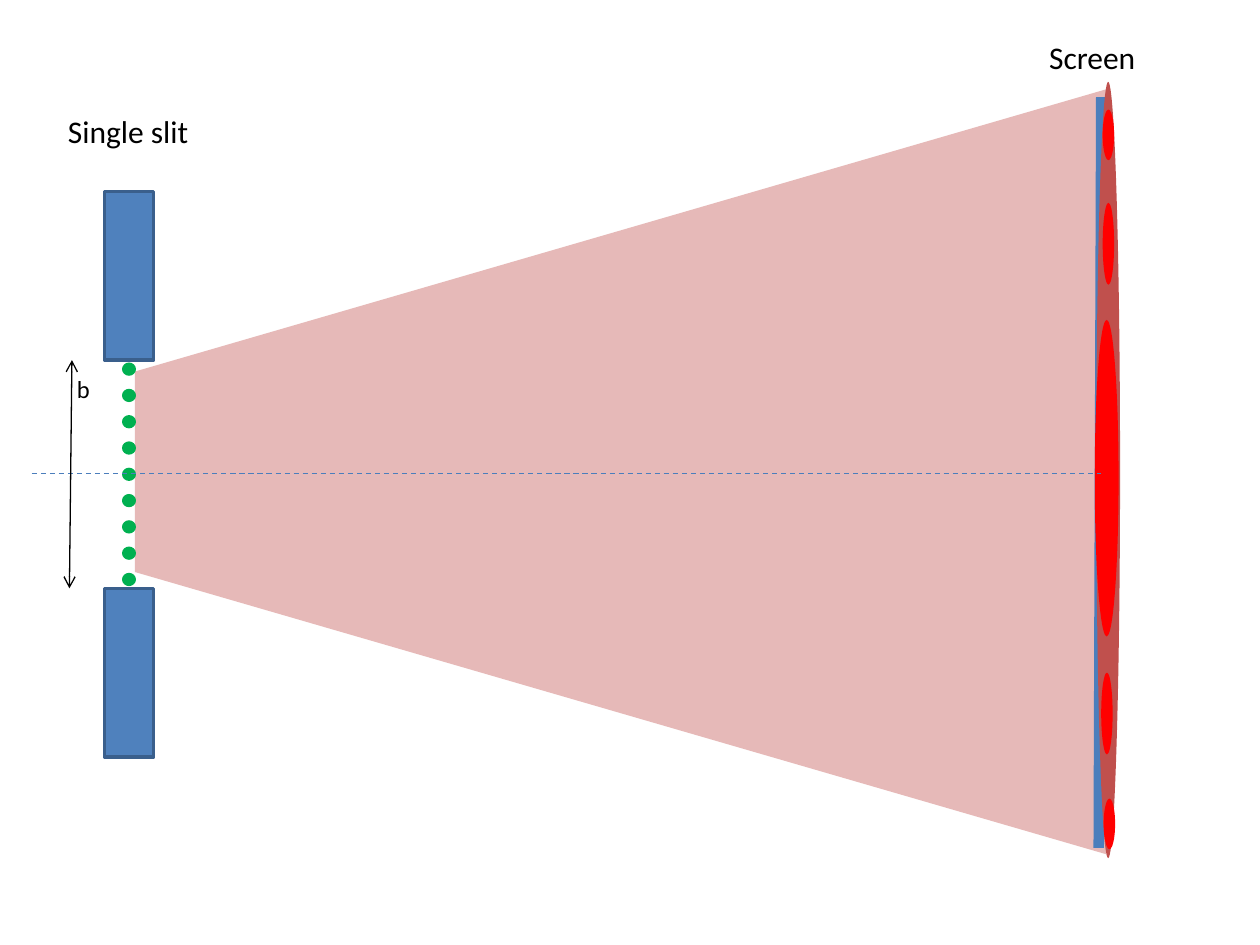
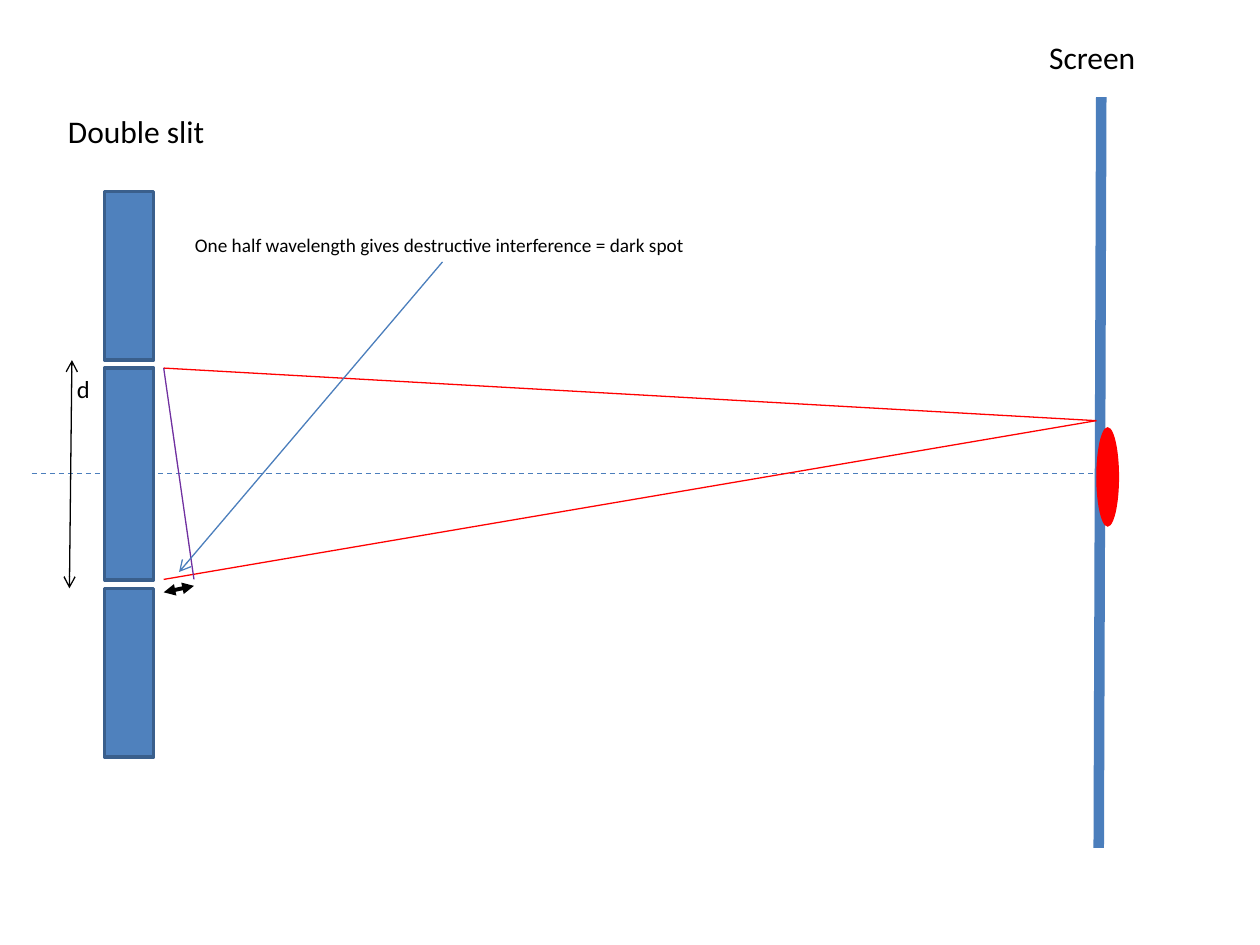
import pptx
import pptx.dml.color
import pptx.enum.dml
import pptx.enum.shapes
import pptx.enum.text
import pptx.oxml.xmlchemy
import pptx.util

Cm = pptx.util.Cm
Pt = pptx.util.Pt
SHAPE = pptx.enum.shapes.MSO_SHAPE
DASH = pptx.enum.dml.MSO_LINE
new_element = pptx.oxml.xmlchemy.OxmlElement

FONT = "Calibri"
BLACK, RED, GREEN, PURPLE = "000000", "FF0000", "00B050", "7030A0"
BLUE, BLUE_EDGE, BLUE_LINE = "4F81BD", "3A5F8C", "4B7EBC"
BEAM, GLOW = "E6B9B8", "C0504D"

# Shared geometry, in centimetres
JAW_LEFT, JAW_WIDTH, JAW_HEIGHT = 2.11, 0.99, 3.4
UPPER_JAW, LOWER_JAW = 3.86, 11.86
AXIS_Y = 9.55


def color(hex_string):
    return pptx.dml.color.RGBColor.from_string(hex_string)


class Diagram:
    """Holds the deck, the current page and the drawing style."""

    def __init__(self):
        self.deck = pptx.Presentation()
        self.deck.slide_width = Cm(25.4)
        self.deck.slide_height = Cm(19.05)
        self.page = None

    def new_page(self):
        self.page = self.deck.slides.add_slide(self.deck.slide_layouts[6])

    def shape(self, kind, left, top, width, height, fill, edge=None, parent=None):
        shapes = (parent or self.page).shapes
        item = shapes.add_shape(kind, Cm(left), Cm(top), Cm(width), Cm(height))
        item.shadow.inherit = False
        item.fill.solid()
        item.fill.fore_color.rgb = color(fill)
        if edge:
            item.line.color.rgb = color(edge)
            item.line.width = Pt(2)
        else:
            item.line.fill.background()
        return item

    def line(self, start, end, stroke, width=0.75, dash=None, head=None, tail=None):
        item = self.page.shapes.add_connector(
            pptx.enum.shapes.MSO_CONNECTOR.STRAIGHT, *map(Cm, start + end))
        item.line.color.rgb = color(stroke)
        item.line.width = Pt(width)
        if dash:
            item.line.dash_style = dash
        properties = item.line._get_or_add_ln()
        if dash == DASH.ROUND_DOT:
            properties.set("cap", "rnd")
        for tag, arrow in (("a:headEnd", head), ("a:tailEnd", tail)):
            if arrow:
                end_mark = new_element(tag)
                end_mark.set("type", arrow)
                properties.append(end_mark)
        item._element.spPr.append(new_element("a:effectLst"))

    def text(self, words, left, top, width, height, size=18):
        box = self.page.shapes.add_textbox(Cm(left), Cm(top), Cm(width), Cm(height))
        box.text_frame.word_wrap = False
        box.text_frame.auto_size = pptx.enum.text.MSO_AUTO_SIZE.SHAPE_TO_FIT_TEXT
        para = box.text_frame.paragraphs[0]
        span = para.add_run()
        span.text = words
        span.font.name = FONT
        span.font.size = Pt(size)
        span.font.color.rgb = color(BLACK)

    def jaw(self, top, height=JAW_HEIGHT):
        self.shape(SHAPE.RECTANGLE, JAW_LEFT, top, JAW_WIDTH, height, BLUE, BLUE_EDGE)

    def apparatus(self, title, title_width):
        """Screen, outer jaws and their labels."""
        self.line((22.2, 1.96), (22.15, 17.09), BLUE_LINE, 6)
        for top in (UPPER_JAW, LOWER_JAW):
            self.jaw(top)
        self.text(title, 1.12, 2.13, title_width, 1.02)
        self.text("Screen", 20.9, 0.64, 2.26, 1.02)

    def axis_and_gap(self, letter):
        """Optical axis and the marked slit distance."""
        self.line((0.64, AXIS_Y), (22.2, AXIS_Y), BLUE_LINE, dash=DASH.DASH)
        self.line((1.45, UPPER_JAW + JAW_HEIGHT), (1.4, LOWER_JAW), BLACK,
                  head="arrow", tail="arrow")
        self.text(letter, 1.3, 7.42, 0.79, 0.86, 14)


def single_slit(diagram):
    diagram.new_page()
    # Spreading beam
    beam = diagram.shape(SHAPE.TRAPEZOID, 4.8, -0.28, 15.42, 19.58, BEAM)
    beam.adjustments[0] = 0.369
    beam.rotation = 270
    diagram.apparatus("Single slit", 2.97)
    # Point sources across the opening
    diagram.line((2.6, 7.44), (2.6, 11.89), GREEN, 7.5, DASH.ROUND_DOT)
    # Diffraction pattern on the screen
    diagram.shape(SHAPE.OVAL, 22.1, 1.65, 0.48, 15.65, GLOW)
    fringes = diagram.page.shapes.add_group_shape()
    for left, top, width, height in (
            (22.07, 6.45, 0.48, 6.38),
            (22.23, 4.09, 0.23, 1.65), (22.2, 13.56, 0.23, 1.65),
            (22.23, 2.21, 0.23, 1.02), (22.25, 16.1, 0.23, 1.02)):
        diagram.shape(SHAPE.OVAL, left, top, width, height, RED, parent=fringes)
    diagram.axis_and_gap("b")


def double_slit(diagram):
    upper_slit, lower_slit, dark_spot = (3.3, 7.42), (3.3, 11.68), (22.1, 8.48)
    diagram.new_page()
    diagram.apparatus("Double slit", 3.3)
    diagram.axis_and_gap("d")
    diagram.jaw(7.42, 4.27)
    # Central bright spot
    diagram.shape(SHAPE.OVAL, 22.1, 8.61, 0.46, 2.01, RED)
    # Rays and their path difference
    for slit in (upper_slit, lower_slit):
        diagram.line(slit, dark_spot, RED)
    diagram.line(upper_slit, (3.91, 11.68), PURPLE)
    diagram.line((3.3, 11.94), (3.91, 11.81), BLACK, 2.25,
                 head="triangle", tail="triangle")
    # Explanation
    diagram.text("One half wavelength gives destructive interference = dark spot",
                 3.68, 4.57, 10.49, 0.74, 11)
    diagram.line((8.92, 5.28), (3.61, 11.53), BLUE_LINE, tail="arrow")


def main():
    diagram = Diagram()
    single_slit(diagram)
    double_slit(diagram)
    diagram.deck.save("out.pptx")


if __name__ == "__main__":
    main()
